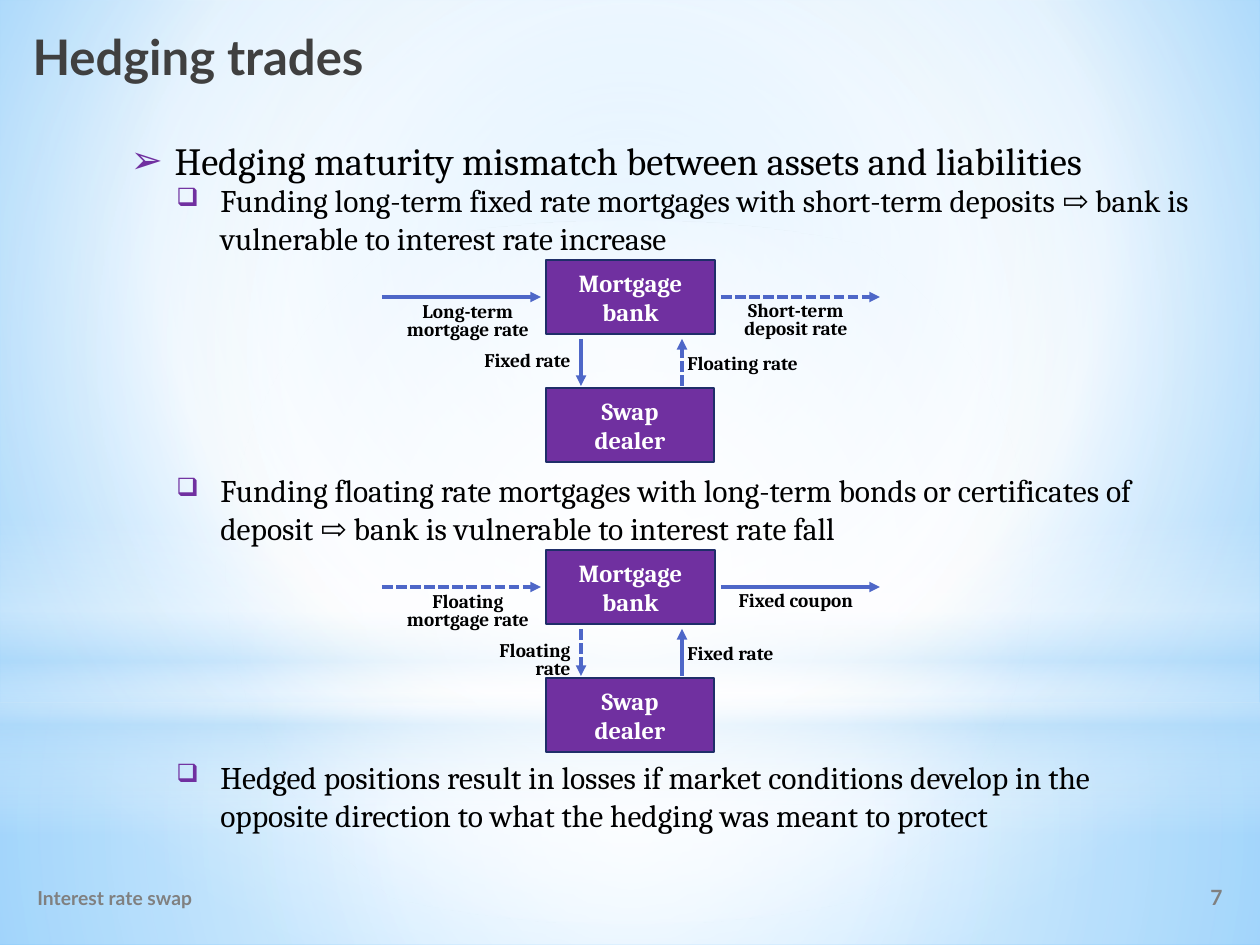
from lxml.etree import SubElement
from pptx import Presentation
from pptx.dml.color import RGBColor
from pptx.enum.dml import MSO_LINE
from pptx.enum.shapes import MSO_CONNECTOR as Connector, MSO_SHAPE as Preset
from pptx.enum.text import MSO_ANCHOR as Anchor, MSO_AUTO_SIZE as AutoSize, PP_ALIGN as Align
from pptx.oxml.ns import qn
from pptx.util import Inches, Pt

WIDTH, HEIGHT = 1260, 945
SCALE = Inches(10) / WIDTH
INDENT = 44

BLACK = RGBColor(0x00, 0x00, 0x00)
WHITE = RGBColor(0xFF, 0xFF, 0xFF)
CHARCOAL = RGBColor(0x40, 0x40, 0x40)
GRAY = RGBColor(0x80, 0x80, 0x80)
PURPLE = RGBColor(0x70, 0x30, 0xA0)
NAVY = RGBColor(0x1F, 0x2E, 0x69)
BLUE = RGBColor(0x4E, 0x67, 0xC8)
PALE_BLUE = RGBColor(0xB4, 0xDC, 0xFA)
SKY = RGBColor(0x9E, 0xD5, 0xFF)
DEEP_SKY = RGBColor(0x5B, 0xB9, 0xFF)

CENTER = (50, 50, 50, 50)
LAYERS = [
    (Preset.RECTANGLE, (0, 703, WIDTH, 242),
     [(0, WHITE, 91), (37, WHITE, 76), (100, PALE_BLUE, 79)], CENTER),
    (Preset.RECTANGLE, (0, 0, WIDTH, 703),
     [(0, WHITE, 89), (48, WHITE, 62), (100, PALE_BLUE, 79)], CENTER),
    (Preset.RECTANGLE, (0, 519, WIDTH, 315),
     [(0, WHITE, 0), (29, WHITE, 30), (45, PALE_BLUE, 40),
      (55, WHITE, 26), (65, PALE_BLUE, 60), (100, WHITE, 0)], None),
    (Preset.OVAL, (0, 221, WIDTH, 703), [(0, WHITE, 100), (56, WHITE, 0)], CENTER),
]

POINTS = [
    ((164, 175, 1062, 89), "Funding long-term fixed rate mortgages with short-term deposits ⇨ "
     "bank is vulnerable to interest rate increase"),
    ((164, 465, 1022, 89), "Funding floating rate mortgages with long-term bonds or certificates "
     "of deposit ⇨ bank is vulnerable to interest rate fall"),
    ((164, 752, 973, 89), "Hedged positions result in losses if market conditions develop in the "
     "opposite direction to what the hedging was meant to protect"),
]

DIAGRAMS = [
    ((382, 260), [("Long-term\nmortgage rate", False), ("Short-term\ndeposit rate", True),
                  ("Fixed rate", False), ("Floating rate", True)]),
    ((382, 550), [("Floating\nmortgage rate", True), ("Fixed coupon", False),
                  ("Floating rate", True), ("Fixed rate", False)]),
]
FLOWS = [
    ((0, 37), (159, 37), (9, 39, 154), Align.CENTER),
    ((339, 37), (498, 37), (337, 38, 154), Align.CENTER),
    ((199, 79), (199, 126), (69, 88, 132), Align.RIGHT),
    ((300, 126), (300, 79), (293, 91, 150), Align.LEFT),
]


def px(*lengths):
    return [round(length * SCALE) for length in lengths]


def write_text(frame, text, size, color, font="Cambria", bold=False, align=Align.LEFT,
               anchor=Anchor.TOP, spacing=None, fit=AutoSize.NONE):
    frame.word_wrap = True
    frame.auto_size = fit
    frame.vertical_anchor = anchor
    for index, line in enumerate(text.split("\n")):
        para = frame.add_paragraph() if index else frame.paragraphs[0]
        para.alignment = align
        para.space_before = Pt(0)
        if spacing:
            para.line_spacing = Pt(spacing)
        span = para.add_run()
        span.text = line
        span.font.name = font
        span.font.size = Pt(size)
        span.font.bold = bold
        span.font.color.rgb = color


def add_text(slide, box, text, **style):
    frame = slide.shapes.add_textbox(*px(*box)).text_frame
    write_text(frame, text, **style)
    return frame


def add_bullet(para, symbol, percent):
    props = para._p.get_or_add_pPr()
    indent, = px(INDENT)
    props.set("marL", str(indent))
    props.set("indent", str(-indent))
    SubElement(SubElement(props, qn("a:buClr")), qn("a:srgbClr"), val=str(PURPLE))
    SubElement(props, qn("a:buSzPct"), val=str(percent * 1000))
    SubElement(props, qn("a:buChar"), char=symbol)


def paint_gradient(owner, fill, stops, focus):
    fill.gradient()
    gradient = next(owner.element.iter(qn("a:gradFill")))
    for child in list(gradient):
        gradient.remove(child)
    stop_list = SubElement(gradient, qn("a:gsLst"))
    for position, color, opacity in stops:
        stop = SubElement(stop_list, qn("a:gs"), pos=str(position * 1000))
        tone = SubElement(stop, qn("a:srgbClr"), val=str(color))
        if opacity < 100:
            SubElement(tone, qn("a:alpha"), val=str(opacity * 1000))
    if focus:
        circle = SubElement(gradient, qn("a:path"), path="circle")
        edges = {side: str(share * 1000) for side, share in zip("ltrb", focus)}
        SubElement(circle, qn("a:fillToRect"), edges)
    else:
        SubElement(gradient, qn("a:lin"), ang="5400000", scaled="0")


def add_backdrop(slide):
    sky = [(0, SKY, 100), (60, WHITE, 100), (100, DEEP_SKY, 100)]
    paint_gradient(slide, slide.background.fill, sky, (20, 10, 20, 60))
    for depth, (preset, box, stops, focus) in enumerate(LAYERS):
        layer = slide.shapes.add_shape(preset, *px(*box))
        layer.shadow.inherit = False
        layer.line.fill.background()
        paint_gradient(layer, layer.fill, stops, focus)
        slide.shapes.element.insert(2 + depth, layer.element)


def fill_placeholder(holder, box, text, **style):
    holder.left, holder.top, holder.width, holder.height = px(*box)
    write_text(holder.text_frame, text, **style)
    return holder.text_frame


def add_party(slide, box, name):
    party = slide.shapes.add_shape(Preset.RECTANGLE, *px(*box))
    party.shadow.inherit = False
    party.fill.solid()
    party.fill.fore_color.rgb = PURPLE
    party.line.color.rgb = NAVY
    party.line.width = Pt(1.25)
    write_text(party.text_frame, name, size=14, color=WHITE, bold=True,
               align=Align.CENTER, anchor=Anchor.MIDDLE)


def add_arrow(slide, start, end, dashed):
    arrow = slide.shapes.add_connector(Connector.STRAIGHT, *px(*start, *end))
    arrow.line.color.rgb = BLUE
    arrow.line.width = Pt(2)
    if dashed:
        arrow.line.dash_style = MSO_LINE.SQUARE_DOT
    SubElement(next(arrow.element.iter(qn("a:ln"))), qn("a:tailEnd"), type="triangle")
    SubElement(next(arrow.element.iter(qn("p:spPr"))), qn("a:effectLst"))


def add_swap_diagram(slide, origin, flows):
    left, top = origin
    add_party(slide, (left + 164, top, 169, 74), "Mortgage\nbank")
    add_party(slide, (left + 164, top + 128, 168, 74), "Swap\ndealer")
    for (label, dashed), (start, end, place, align) in zip(flows, FLOWS):
        add_arrow(slide, (left + start[0], top + start[1]),
                  (left + end[0], top + end[1]), dashed)
        x, y, width = place
        height = 48 if "\n" in label else 30
        add_text(slide, (left + x, top + y, width, height), label, size=11, color=BLACK,
                 bold=True, align=align, spacing=10, fit=AutoSize.SHAPE_TO_FIT_TEXT)


def add_footer(slide, box):
    left, top, width, height = box
    style = dict(color=GRAY, font="Lato", bold=True, anchor=Anchor.MIDDLE)
    add_text(slide, (left, top, 456, height), "Interest rate swap", size=11, **style)
    add_text(slide, (left + width - 248, top, 248, height), "7", size=12,
             align=Align.RIGHT, **style)


def build_slide(deck):
    slide = deck.slides.add_slide(deck.slide_layouts[1])
    add_backdrop(slide)
    title, body = slide.placeholders
    fill_placeholder(title, (20, 20, 610, 89), "Hedging trades", size=28,
                     color=CHARCOAL, font="Lato", bold=True)
    heading = fill_placeholder(body, (118, 131, 1106, 59),
                               "Hedging maturity mismatch between assets and liabilities",
                               size=22, color=BLACK)
    add_bullet(heading.paragraphs[0], "➢", 100)
    for box, text in POINTS:
        point = add_text(slide, box, text, size=18, color=BLACK,
                         fit=AutoSize.SHAPE_TO_FIT_TEXT).paragraphs[0]
        point.level = 1
        add_bullet(point, "❑", 80)
    for origin, flows in DIAGRAMS:
        add_swap_diagram(slide, origin, flows)
    add_footer(slide, (25, 873, 1210, 49))


def main():
    deck = Presentation()
    deck.slide_width, deck.slide_height = px(WIDTH, HEIGHT)
    build_slide(deck)
    deck.save("out.pptx")


if __name__ == "__main__":
    main()
